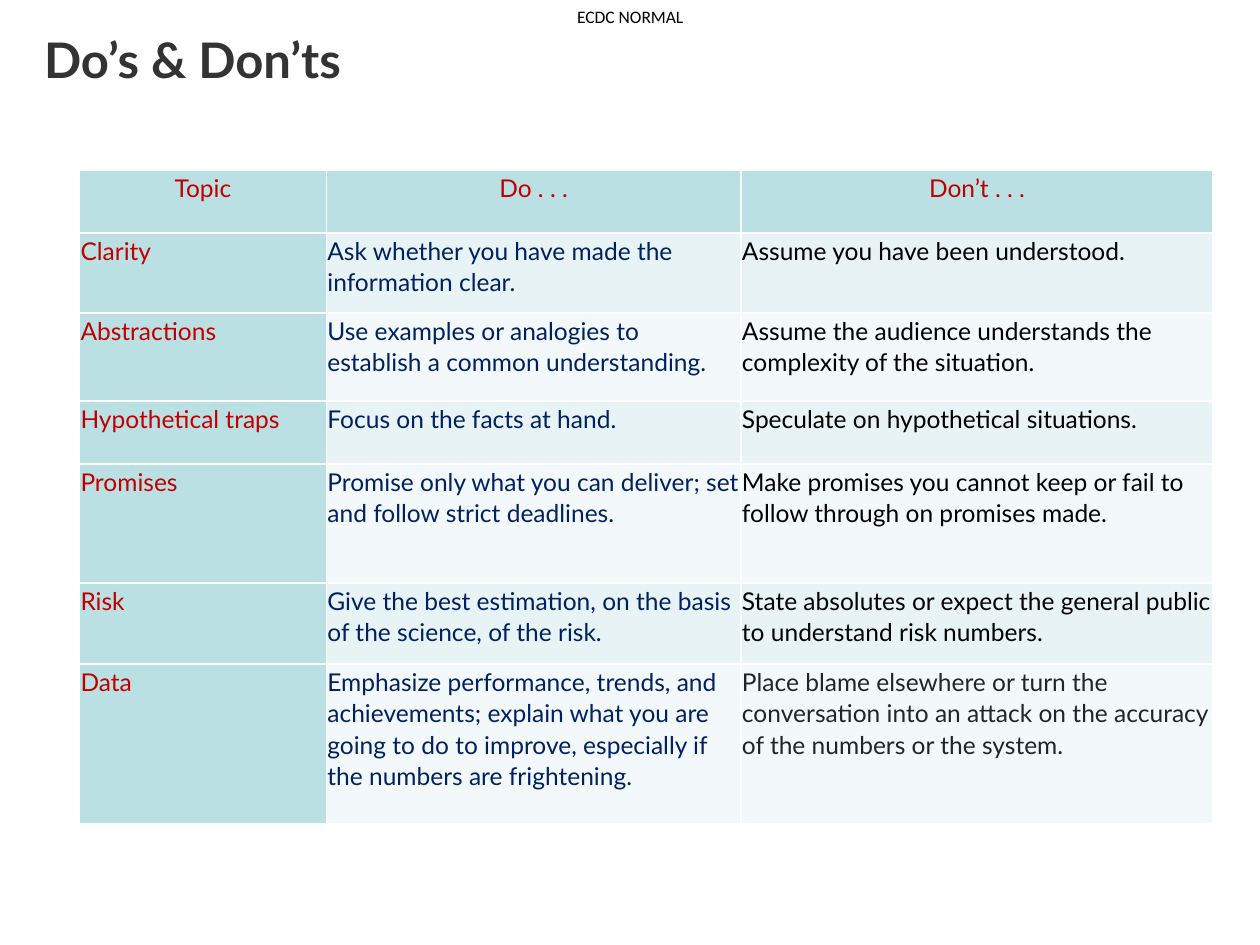
from dataclasses import dataclass

from lxml.etree import SubElement
from pptx import Presentation
from pptx.dml.color import RGBColor as RGB
from pptx.enum.text import MSO_ANCHOR as ANCHOR, PP_ALIGN as ALIGN
from pptx.oxml.ns import qn
from pptx.util import Pt


@dataclass(frozen=True)
class Theme:
    """Colours, fonts and type sizes of the slide."""
    red: str = "C00000"
    navy: str = "002060"
    black: str = "000000"
    charcoal: str = "212529"
    title: str = "333333"
    white: str = "FFFFFF"
    teal: str = "BBE0E3"
    bands: tuple = ("E7F3F4", "F3F9FA")
    font: str = "Lato"
    label_font: str = "Calibri"
    title_size: int = 28
    body_size: int = 14
    label_size: int = 10


T = Theme()
COLUMNS = (141.1, 236.9, 269.9)
ROW_HEIGHTS = (36, 45.6, 50.4, 36, 68.1, 46.3, 91.1)
HEADER = ("Topic", "Do . . .", "Don’t . . .")
ADVICE = (
    ("Clarity", "Ask whether you have made the information clear.",
     "Assume you have been understood."),
    ("Abstractions", "Use examples or analogies to establish a common understanding.",
     "Assume the audience understands the complexity of the situation."),
    ("Hypothetical traps", "Focus on the facts at hand.",
     "Speculate on hypothetical situations."),
    ("Promises", "Promise only what you can deliver; set and follow strict deadlines.",
     "Make promises you cannot keep or fail to follow through on promises made."),
    ("Risk", "Give the best estimation, on the basis of the science, of the risk.",
     "State absolutes or expect the general public to understand risk numbers."),
    ("Data", "Emphasize performance, trends, and achievements; explain what you are "
     "going to do to improve, especially if the numbers are frightening.",
     "Place blame elsewhere or turn the conversation into an attack on the accuracy "
     "of the numbers or the system."),
)


def set_text(tf, text, font, size, color, spacing, bold=False, align=ALIGN.LEFT):
    """Write one formatted paragraph and return it."""
    tf.text = text
    p = tf.paragraphs[0]
    p.alignment, p.line_spacing = align, spacing
    f = p.runs[0].font
    f.name, f.size, f.bold = font, Pt(size), bold
    f.color.rgb = RGB.from_string(color)
    return p


def add_text(s, box, text, font, size, color, bold=False, align=ALIGN.LEFT, wrap=True):
    """Place a text box without margins in the given box."""
    tf = s.shapes.add_textbox(*map(Pt, box)).text_frame
    tf.margin_left = tf.margin_top = tf.margin_right = tf.margin_bottom = 0
    tf.word_wrap, tf.vertical_anchor = wrap, ANCHOR.TOP
    set_text(tf, text, font, size, color, 0.9, bold, align)


def add_borders(cell, color, width):
    """Draw a solid line on all four sides of a cell."""
    props = cell._tc.get_or_add_tcPr()
    for i, side in enumerate(("lnL", "lnR", "lnT", "lnB")):
        ln = SubElement(props, qn(f"a:{side}"), w=str(Pt(width)))
        fill = SubElement(ln, qn("a:solidFill"))
        SubElement(fill, qn("a:srgbClr"), val=color)
        props.insert(i, ln)


def fill_cell(cell, text, color, fill, align):
    """Fill, border and write one table cell."""
    cell.fill.solid()
    cell.fill.fore_color.rgb = RGB.from_string(fill)
    add_borders(cell, T.white, 1)
    cell.margin_left = cell.margin_top = cell.margin_right = cell.margin_bottom = Pt(0.6)
    p = set_text(cell.text_frame, text, T.font, T.body_size, color, 1.07, align=align)
    p.space_after = Pt(8)


def add_advice_table(s, left, top):
    """Build the table of advice with its top left corner at the given point."""
    rows = (HEADER, *ADVICE)
    frame = s.shapes.add_table(len(rows), len(COLUMNS), Pt(left), Pt(top),
                               Pt(sum(COLUMNS)), Pt(sum(ROW_HEIGHTS)))
    table = frame.table
    table.horz_banding = False
    for column, width in zip(table.columns, COLUMNS):
        column.width = Pt(width)
    for i, (row, height, texts) in enumerate(zip(table.rows, ROW_HEIGHTS, rows)):
        row.height = Pt(height)
        last = T.charcoal if i == len(ADVICE) else T.black
        colors = (T.red, T.navy, last) if i else (T.red,) * 3
        for j, (cell, text, color) in enumerate(zip(row.cells, texts, colors)):
            fill = T.bands[(i - 1) % 2] if i and j else T.teal
            fill_cell(cell, text, color, fill, ALIGN.LEFT if i else ALIGN.CENTER)


def main():
    """Build and save the slide."""
    prs = Presentation()
    prs.slide_width, prs.slide_height = Pt(720), Pt(540)
    s = prs.slides.add_slide(prs.slide_layouts[6])
    add_text(s, (329.8, 5, 63.4, 12.2), "ECDC NORMAL", T.label_font, T.label_size,
             T.black, align=ALIGN.LEFT, wrap=False)
    add_text(s, (25.2, 20.9, 648, 55.4), "Do’s & Don’ts", T.font, T.title_size,
             T.title, bold=True)
    add_advice_table(s, 45.4, 97.2)
    prs.save("out.pptx")


if __name__ == "__main__":
    main()
